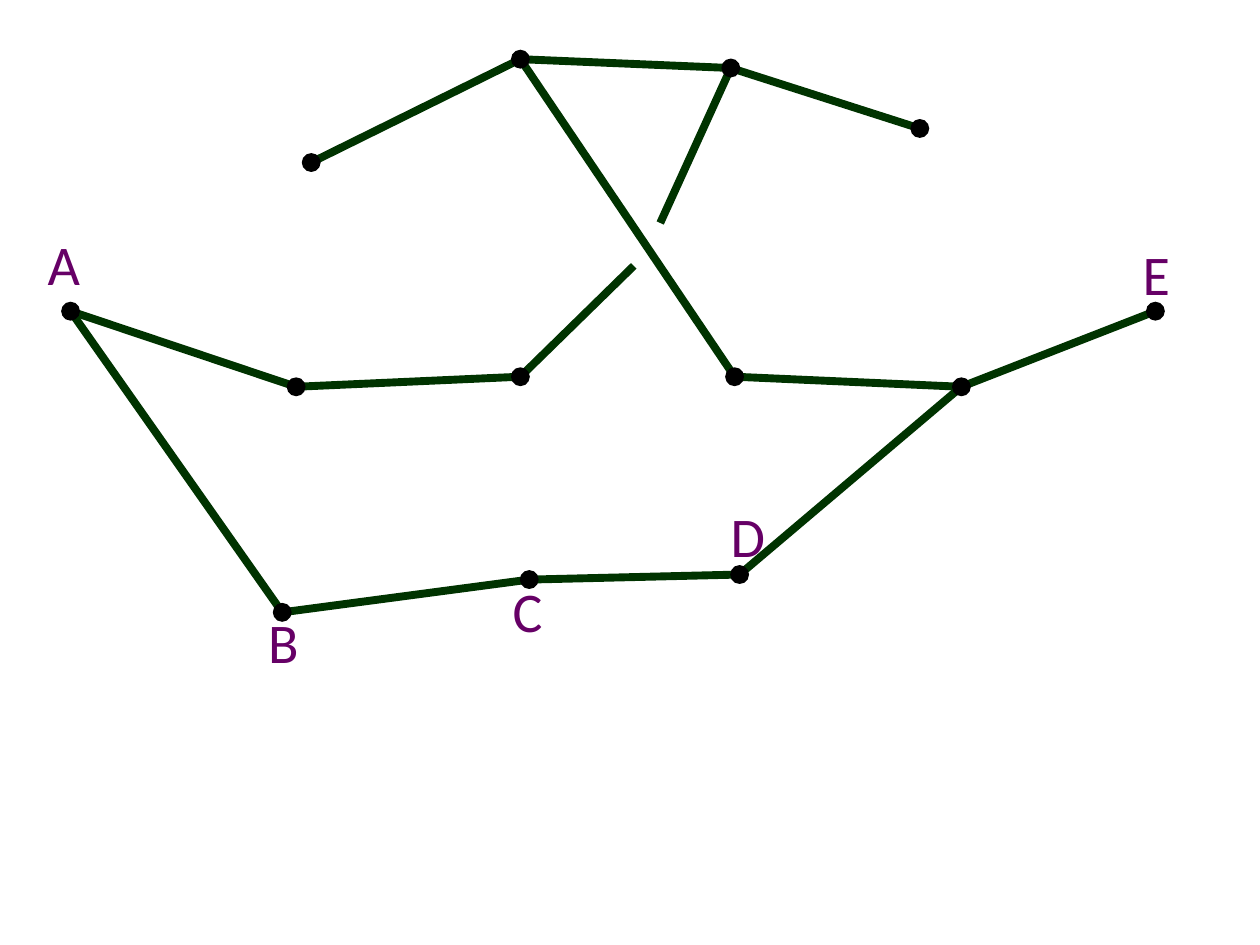
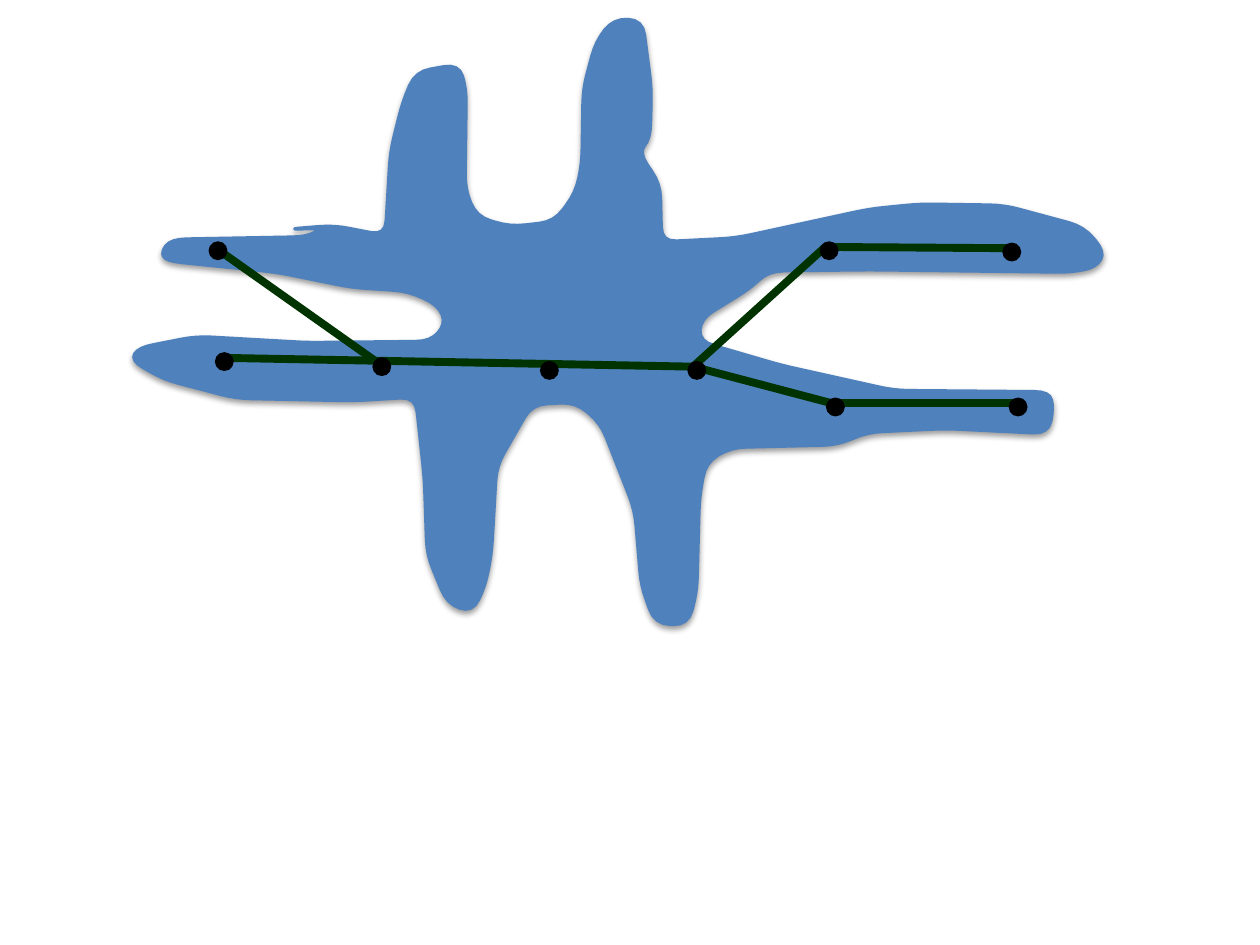
from math import dist

from pptx import Presentation, util as u
from pptx.dml.color import RGBColor
from pptx.enum import shapes
from pptx.oxml import parse_xml
from pptx.oxml.ns import nsdecls, qn
from lxml import etree

GREEN = RGBColor(0x00, 0x33, 0x00)
BLACK = RGBColor(0x00, 0x00, 0x00)
PURPLE = RGBColor(0x66, 0x00, 0x66)
BLUE = RGBColor(0x4F, 0x81, 0xBD)

DOT = 0.15
LABEL_SIZE = (0.47, 0.64)
ROUNDING = 0.12

# Dots are named by their centres; each route joins named points in order.
CHAIN = {
    "dots": {
        "A": (0.56, 2.47), "B": (2.24, 4.86), "C": (4.2, 4.6),
        "D": (5.87, 4.56), "E": (9.17, 2.47),
        "left": (2.35, 3.07), "inner left": (4.13, 2.99),
        "inner right": (5.83, 2.99), "right": (7.63, 3.07),
        "top left": (4.13, 0.47), "top right": (5.8, 0.54),
        "far left": (2.47, 1.29), "far right": (7.3, 1.02),
    },
    "gaps": {"under": (5.03, 2.11), "over": (5.24, 1.77)},
    "routes": [
        ("far left", "top left", "top right", "far right"),
        ("top left", "inner right", "right", "E"),
        ("A", "left", "inner left", "under"),
        ("over", "top right"),
        ("A", "B", "C", "D", "right"),
    ],
    "labels": {"A": (0.28, 1.77), "B": (2.03, 4.77), "C": (3.97, 4.53),
               "D": (5.7, 3.93), "E": (8.97, 1.85)},
    "line shift": 0,
}

SKELETON = {
    "dots": {
        "upper left": (1.73, 1.99), "lower left": (1.78, 2.87),
        "left fork": (3.03, 2.91), "middle": (4.36, 2.94),
        "right fork": (5.53, 2.94), "upper bend": (6.58, 1.99),
        "lower bend": (6.63, 3.23), "upper right": (8.03, 2),
        "lower right": (8.08, 3.23),
    },
    "gaps": {},
    "routes": [
        ("upper left", "left fork"),
        ("lower left", "right fork", "lower bend", "lower right"),
        ("right fork", "upper bend", "upper right"),
    ],
    "labels": {},
    "line shift": -0.03,
}

# Corners of the blob, clockwise; the corners are rounded when drawn.
BLOB = {
    "upper left limb, top": [(2.28, 1.82), (2.65, 1.79), (3.06, 1.87)],
    "first arm up": [(3.1, 1.2), (3.2, 0.8), (3.3, 0.57), (3.64, 0.51),
                     (3.7, 0.7), (3.69, 1.5), (3.78, 1.72), (4.05, 1.8),
                     (4.4, 1.76), (4.57, 1.53)],
    "second arm up": [(4.62, 1.3), (4.63, 0.7), (4.73, 0.33), (4.87, 0.15),
                      (5.1, 0.16), (5.17, 0.7), (5.16, 1.1), (5.07, 1.21),
                      (5.24, 1.46), (5.25, 1.92)],
    "upper right limb": [(5.84, 1.89), (6.9, 1.66), (7.3, 1.62), (7.97, 1.63),
                         (8.6, 1.8), (8.77, 2), (8.7, 2.12), (8.5, 2.16),
                         (6.9, 2.14), (6.1, 2.15), (5.95, 2.29), (5.56, 2.53),
                         (5.55, 2.71)],
    "lower right limb": [(6.2, 2.9), (7.1, 3.1), (8.33, 3.11), (8.36, 3.24),
                         (8.32, 3.44), (7.5, 3.4), (6.88, 3.43), (6.65, 3.53),
                         (5.8, 3.55), (5.6, 3.67)],
    "second arm down": [(5.55, 3.95), (5.53, 4.7), (5.46, 4.96), (5.2, 4.95),
                        (5.09, 4.65), (5.04, 4.05), (4.77, 3.36), (4.57, 3.19),
                        (4.22, 3.21), (3.94, 3.7)],
    "first arm down": [(3.9, 4.4), (3.85, 4.65), (3.75, 4.86), (3.55, 4.79),
                       (3.39, 4.4), (3.37, 3.8), (3.3, 3.15)],
    "lower left limb": [(2.8, 3.18), (1.87, 3.16), (1.3, 3.01), (1.04, 2.86),
                        (1.1, 2.76), (1.56, 2.67), (2.44, 2.72), (3.42, 2.71),
                        (3.54, 2.57), (3.48, 2.42), (3.24, 2.31)],
    "upper left limb, bottom": [(2.79, 2.28), (2.2, 2.16), (1.32, 2.07),
                                (1.28, 2), (1.36, 1.9), (2.44, 1.88),
                                (2.56, 1.81)],
}


def inches(*lengths):
    return [u.Inches(length) for length in lengths]


def toward(start, end, reach):
    """The point at most reach, and at most half way, from start to end."""
    share = min(0.5, reach / dist(start, end))
    return tuple(a + (b - a) * share for a, b in zip(start, end))


def rounded(corners, steps=4):
    """Replace each corner by points on a quadratic curve."""
    points = []
    for before, corner, after in zip(corners[-1:] + corners, corners,
                                     corners[1:] + corners[:1]):
        enter = toward(corner, before, ROUNDING)
        leave = toward(corner, after, ROUNDING)
        for step in range(steps + 1):
            t = step / steps
            points.append([(1 - t) ** 2 * a + 2 * t * (1 - t) * b + t * t * c
                           for a, b, c in zip(enter, corner, leave)])
    return points


def add_blob(slide):
    corners = [corner for limb in BLOB.values() for corner in limb]
    outline = [inches(*point) for point in rounded(corners)]
    builder = slide.shapes.build_freeform(*outline[0])
    builder.add_line_segments(outline[1:], close=True)
    blob = builder.convert_to_shape()
    blob.fill.solid()
    blob.fill.fore_color.rgb = BLUE
    blob.line.color.rgb = BLUE
    blob.line.width = u.Pt(2)
    blob.element.spPr.append(parse_xml(
        f'<a:effectLst {nsdecls("a")}><a:outerShdw blurRad="40000" dist="20000" '
        'dir="5400000" rotWithShape="0"><a:srgbClr val="000000">'
        '<a:alpha val="38000"/></a:srgbClr></a:outerShdw></a:effectLst>'))


def add_line(slide, start, end, shift):
    ends = [length + shift for length in (*start, *end)]
    line = slide.shapes.add_connector(shapes.MSO_CONNECTOR.STRAIGHT, *inches(*ends))
    line.line.color.rgb = GREEN
    line.line.width = u.Pt(4.5)
    etree.SubElement(line.element.spPr, qn("a:effectLst"))


def add_dot(slide, centre):
    corner = [length - DOT / 2 for length in centre]
    dot = slide.shapes.add_shape(shapes.MSO_SHAPE.OVAL, *inches(*corner, DOT, DOT))
    dot.shadow.inherit = False
    dot.fill.solid()
    dot.fill.fore_color.rgb = BLACK
    dot.line.fill.background()


def add_label(slide, letter, corner):
    box = slide.shapes.add_textbox(*inches(*corner, *LABEL_SIZE))
    box.text_frame.word_wrap = True
    para = box.text_frame.paragraphs[0]
    para.text = letter
    para.font.name = "Calibri"
    para.font.size = u.Pt(32)
    para.font.color.rgb = PURPLE


def add_graph(slide, graph):
    points = graph["dots"] | graph["gaps"]
    for route in graph["routes"]:
        for start, end in zip(route, route[1:]):
            add_line(slide, points[start], points[end], graph["line shift"])
    for centre in graph["dots"].values():
        add_dot(slide, centre)
    for letter, corner in graph["labels"].items():
        add_label(slide, letter, corner)


def main():
    deck = Presentation()
    deck.slide_width, deck.slide_height = inches(10, 7.5)
    blank = deck.slide_layouts[6]
    add_graph(deck.slides.add_slide(blank), CHAIN)
    blob_slide = deck.slides.add_slide(blank)
    add_blob(blob_slide)
    add_graph(blob_slide, SKELETON)
    deck.save("out.pptx")


if __name__ == "__main__":
    main()
